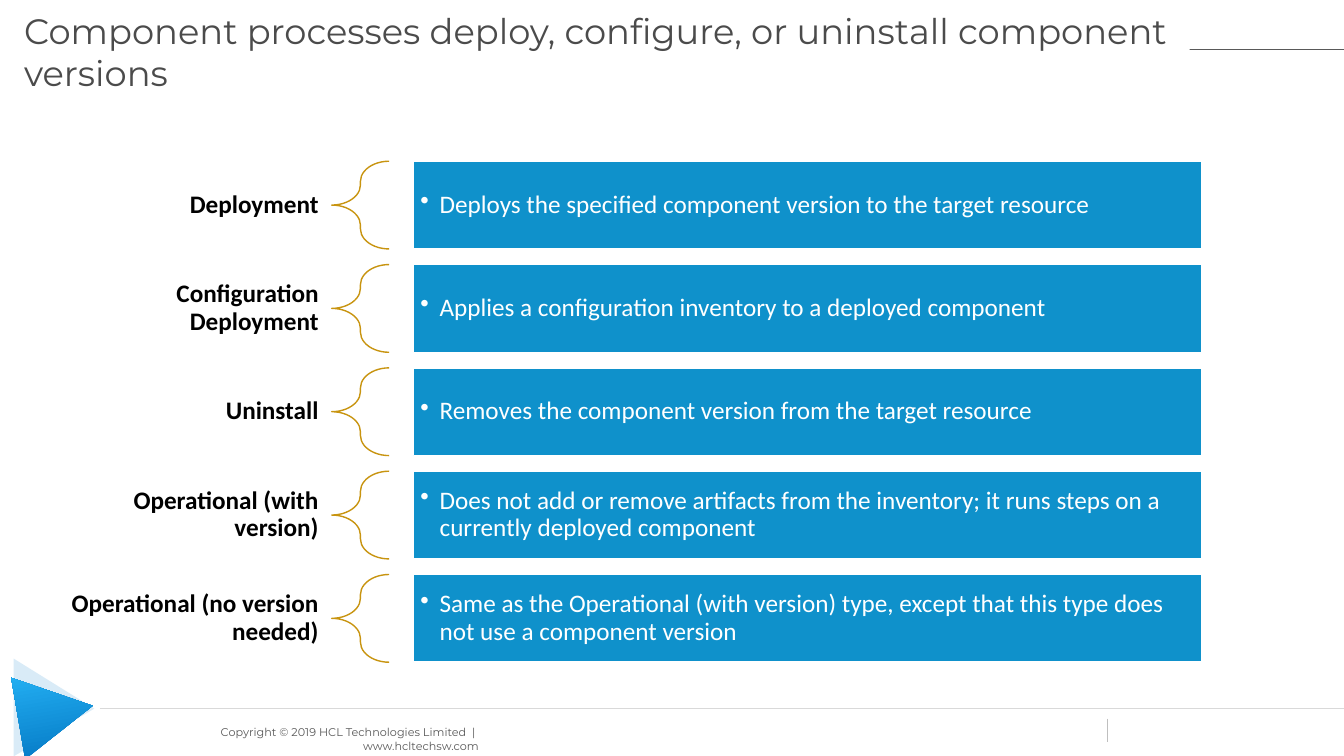
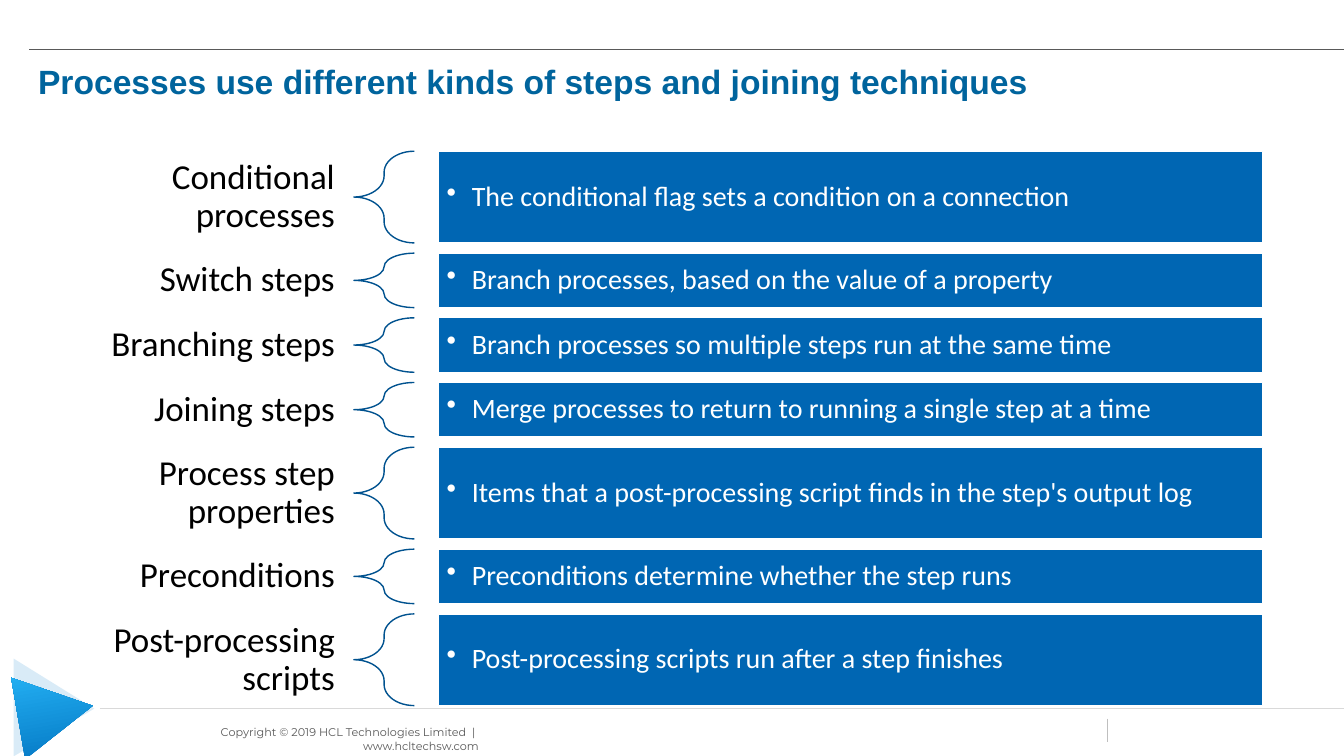
from dataclasses import dataclass

from lxml import etree
from pptx import Presentation
from pptx.dml.color import RGBColor
from pptx.enum.shapes import MSO_CONNECTOR, MSO_SHAPE
from pptx.enum.text import MSO_ANCHOR, PP_ALIGN
from pptx.oxml.ns import qn
from pptx.util import Pt

EMU_PER_PX = 9144  # 100 px to the inch
SLIDE_W, SLIDE_H = 1333, 750
LEFT, RIGHT = PP_ALIGN.LEFT, PP_ALIGN.RIGHT
TOP, MIDDLE = MSO_ANCHOR.TOP, MSO_ANCHOR.MIDDLE
RECTANGLE, BRACE = MSO_SHAPE.RECTANGLE, MSO_SHAPE.LEFT_BRACE
TRIANGLE = MSO_SHAPE.ISOSCELES_TRIANGLE
STRAIGHT = MSO_CONNECTOR.STRAIGHT

WHITE, BLACK, GREY = "FFFFFF", "000000", "595959"
BODY_FONT, BRAND_FONT, HEADING_FONT = "Calibri", "Montserrat", "Arial"
COPYRIGHT = "Copyright © 2019 HCL Technologies Limited  |  www.hcltechsw.com"


@dataclass
class TextStyle:
    size: float
    color: str
    font: str = BODY_FONT
    bold: bool = False
    align: PP_ALIGN = LEFT
    spacing: float = 0.9


@dataclass
class BraceList:
    """Geometry and look of a list of label, brace and description rows."""
    top: int
    bottom: int
    label_span: tuple
    brace_span: tuple
    box_span: tuple
    label_margins: tuple
    box_margin: int
    bullet_indent: int
    label_style: TextStyle
    box_style: TextStyle
    brace_color: str
    box_color: str


PROCESS_TYPES = BraceList(
    top=160, bottom=657, label_span=(42, 288), brace_span=(329, 57),
    box_span=(410, 782), label_margins=(14, 5, 14, 5), box_margin=7,
    bullet_indent=19, label_style=TextStyle(18, BLACK, bold=True, align=RIGHT),
    box_style=TextStyle(18, WHITE), brace_color="C89410", box_color="0F91CB")
STEP_KINDS = BraceList(
    top=150, bottom=700, label_span=(50, 301), brace_span=(351, 60),
    box_span=(435, 817), label_margins=(19, 7, 19, 7), box_margin=8,
    bullet_indent=25, label_style=TextStyle(25, BLACK, align=RIGHT),
    box_style=TextStyle(20, WHITE), brace_color="00528F", box_color="0066B3")

# Row height, label, description
PROCESS_ROWS = [
    (87, "Deployment",
     "Deploys the specified component version to the target resource"),
    (87, "Configuration Deployment",
     "Applies a configuration inventory to a deployed component"),
    (87, "Uninstall",
     "Removes the component version from the target resource"),
    (87, "Operational (with version)",
     "Does not add or remove artifacts from the inventory; "
     "it runs steps on a currently deployed component"),
    (87, "Operational (no version needed)",
     "Same as the Operational (with version) type, "
     "except that this type does not use a component version"),
]
STEP_ROWS = [
    (91, "Conditional processes",
     "The conditional flag sets a condition on a connection"),
    (54, "Switch steps", "Branch processes, based on the value of a property"),
    (54, "Branching steps",
     "Branch processes so multiple steps run at the same time"),
    (54, "Joining steps",
     "Merge processes to return to running a single step at a time"),
    (91, "Process step properties",
     "Items that a post-processing script finds in the step's output log"),
    (54, "Preconditions", "Preconditions determine whether the step runs"),
    (91, "Post-processing scripts",
     "Post-processing scripts run after a step finishes"),
]


def px(length):
    return round(length * EMU_PER_PX)


def rgb(color):
    return RGBColor.from_string(color)


def add_line(slide, x1, y1, x2, y2, color):
    line = slide.shapes.add_connector(STRAIGHT, px(x1), px(y1), px(x2), px(y2))
    line.line.color.rgb = rgb(color)
    line.line.width = Pt(0.5)
    etree.SubElement(line._element.spPr, qn("a:effectLst"))


def add_shape(slide, preset, x, y, w, h, fill=None, line=None):
    shape = slide.shapes.add_shape(preset, px(x), px(y), px(w), px(h))
    shape.shadow.inherit = False
    if fill:
        shape.fill.solid()
        shape.fill.fore_color.rgb = rgb(fill)
    else:
        shape.fill.background()
    if line:
        shape.line.color.rgb = rgb(line)
        shape.line.width = Pt(1)
    else:
        shape.line.fill.background()
    return shape


def set_text(shape, text, style, margins=(10, 5, 10, 5), anchor=TOP, bullet_indent=0):
    frame = shape.text_frame
    frame.word_wrap = True
    frame.vertical_anchor = anchor
    (frame.margin_left, frame.margin_top,
     frame.margin_right, frame.margin_bottom) = map(px, margins)
    paragraph = frame.paragraphs[0]
    if bullet_indent:
        properties = paragraph._p.get_or_add_pPr()
        properties.set("marL", str(px(bullet_indent)))
        properties.set("indent", str(-px(bullet_indent)))
        etree.SubElement(properties, qn("a:buChar"), char="•")
    paragraph.alignment = style.align
    paragraph.line_spacing = style.spacing
    run = paragraph.add_run()
    run.text = text
    run.font.size = Pt(style.size)
    run.font.name = style.font
    run.font.bold = style.bold
    run.font.color.rgb = rgb(style.color)


def add_text(slide, x, y, w, h, text, style, **options):
    box = slide.shapes.add_textbox(px(x), px(y), px(w), px(h))
    set_text(box, text, style, **options)


def add_corner_triangles(slide):
    pale = add_shape(slide, TRIANGLE, 5, 662, 97, 80, fill="69B3E1")
    pale.rotation = 90.1
    pale.adjustments[0] = 0.51
    pale_color = pale._element.spPr.find(qn("a:solidFill"))[0]
    etree.SubElement(pale_color, qn("a:alpha"), val="25000")

    bright = add_shape(slide, TRIANGLE, 14, 669, 82, 75)
    bright.rotation = 80.3
    bright.fill.gradient()
    bright.fill.gradient_angle = 180
    for stop, color in zip(bright.fill.gradient_stops, ("0477C3", "26B5F7")):
        stop.color.rgb = rgb(color)


def add_framed_slide(prs):
    """Add a blank slide with the shared rules, corner and footer."""
    slide = prs.slides.add_slide(prs.slide_layouts[6])
    add_line(slide, 29, 49, SLIDE_W, 49, GREY)
    add_line(slide, 99, 703, SLIDE_W, 703, "D9D9D9")
    add_line(slide, 1098, 713, 1098, 736, "BFBFBF")
    add_corner_triangles(slide)
    add_text(slide, 154, 715, 321, 24, COPYRIGHT,
             TextStyle(8, GREY, BRAND_FONT, align=RIGHT, spacing=1.0),
             margins=(10, 5, 0, 5))
    return slide


def add_brace_list(slide, look, rows):
    free = look.bottom - look.top - sum(height for height, _, _ in rows)
    gap = free / (len(rows) - 1)
    y = look.top
    for height, label, description in rows:
        label_x, label_w = look.label_span
        add_text(slide, label_x, y, label_w, height, label, look.label_style,
                 margins=look.label_margins, anchor=MIDDLE)

        brace_x, brace_w = look.brace_span
        brace = add_shape(slide, BRACE, brace_x, y, brace_w, height,
                          line=look.brace_color)
        brace.adjustments[0] = 0.35
        brace.adjustments[1] = 0.5

        box_x, box_w = look.box_span
        box = add_shape(slide, RECTANGLE, box_x, y, box_w, height,
                        fill=look.box_color, line=WHITE)
        set_text(box, description, look.box_style, (look.box_margin,) * 4,
                 MIDDLE, look.bullet_indent)
        y += height + gap


def main():
    prs = Presentation()
    prs.slide_width, prs.slide_height = px(SLIDE_W), px(SLIDE_H)

    # Process types: the white title band covers part of the top rule
    slide = add_framed_slide(prs)
    title = add_shape(slide, RECTANGLE, 14, 4, 1166, 69, fill=WHITE)
    set_text(title,
             "Component processes deploy, configure, or uninstall component versions",
             TextStyle(25.2, "4B4B4B", BRAND_FONT, spacing=1.0))
    add_brace_list(slide, PROCESS_TYPES, PROCESS_ROWS)

    # Step kinds
    slide = add_framed_slide(prs)
    add_text(slide, 28, 60, 1290, 50,
             "Processes use different kinds of steps and joining techniques",
             TextStyle(24, "00649D", HEADING_FONT, bold=True))
    add_brace_list(slide, STEP_KINDS, STEP_ROWS)

    prs.save("out.pptx")


if __name__ == "__main__":
    main()
